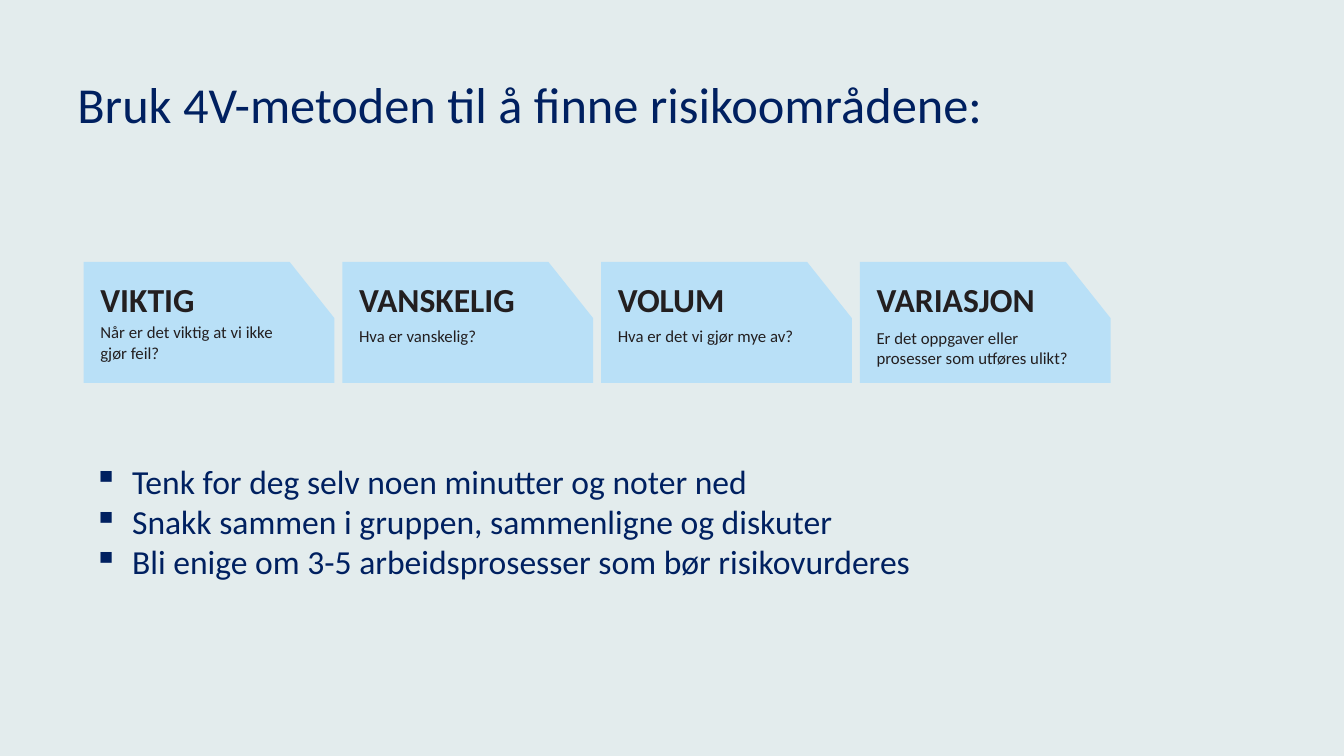
import dataclasses
import pptx
import pptx.dml.color
import pptx.enum.text
import pptx.oxml
import pptx.oxml.ns
import pptx.util

Cm = pptx.util.Cm
Anchor = pptx.enum.text.MSO_ANCHOR


@dataclasses.dataclass(frozen=True)
class Theme:
    font: str = "Calibri"
    back: str = "E3ECED"
    card: str = "B9E0F7"
    ink: str = "231F20"
    navy: str = "002060"
    title: int = 36
    head: int = 24
    note: int = 12


THEME = Theme()
TITLE = "Bruk 4V-metoden til å finne risikoområdene:"
CARDS = [
    ("VIKTIG", "Når er det viktig at vi ikke gjør feil?", 7.92),
    ("VANSKELIG", "Hva er vanskelig?", 8),
    ("VOLUM", "Hva er det vi gjør mye av?", 8),
    ("VARIASJON", "Er det oppgaver eller prosesser som utføres ulikt?", 8.05),
]
TASKS = [
    "Tenk for deg selv noen minutter og noter ned",
    "Snakk sammen i gruppen, sammenligne og diskuter",
    "Bli enige om 3-5 arbeidsprosesser som bør risikovurderes",
]


def paint(fill, color):
    fill.solid()
    fill.fore_color.rgb = pptx.dml.color.RGBColor.from_string(color)


def place(shape, left, top, width, height):
    shape.left, shape.top = Cm(left), Cm(top)
    shape.width, shape.height = Cm(width), Cm(height)


def add_mark(para, indent):
    props = para._p.get_or_add_pPr()
    props.set("marL", str(Cm(indent)))
    props.set("indent", str(-Cm(indent)))
    mark = pptx.oxml.parse_xml(f'<a:buChar {pptx.oxml.ns.nsdecls("a")} char="▪"/>')
    props.append(mark)


def write(frame, lines, size, color, bold=False, anchor=Anchor.TOP,
          inset=(0.25, 0.13, 0.25, 0.13), bullet=False):
    frame.word_wrap = True
    frame.auto_size = pptx.enum.text.MSO_AUTO_SIZE.NONE
    frame.vertical_anchor = anchor
    (frame.margin_left, frame.margin_top,
     frame.margin_right, frame.margin_bottom) = map(Cm, inset)
    for index, line in enumerate(lines):
        para = frame.add_paragraph() if index else frame.paragraphs[0]
        para.alignment = pptx.enum.text.PP_ALIGN.LEFT
        if bullet:
            add_mark(para, 0.97)
        run = para.add_run()
        run.text = line
        run.font.name = THEME.font
        run.font.size = pptx.util.Pt(size)
        run.font.bold = bold
        paint(run.font.fill, color)


def add_text(slide, box, lines, **style):
    shape = slide.shapes.add_textbox(*map(Cm, box))
    write(shape.text_frame, lines, **style)


def add_card(slide, left, label, note, drop):
    top, width, height = 6.6, 6.32, 3.05
    right, base = left + width, top + height
    path = slide.shapes.build_freeform(Cm(right - 1.13), Cm(top))
    points = [(left, top), (left, base), (right, base), (right, top + 1.42)]
    path.add_line_segments([(Cm(x), Cm(y)) for x, y in points], close=True)
    card = path.convert_to_shape()
    card.shadow.inherit = False
    paint(card.fill, THEME.card)
    card.line.fill.background()
    add_text(slide, (left, 7, 4.88, 1.08), [label], size=THEME.head,
             color=THEME.ink, bold=True, inset=(0.42, 0.03, 0, 0))
    add_text(slide, (left, drop, 5.4, 1.32), [note], size=THEME.note,
             color=THEME.ink, inset=(0.42, 0.2, 0, 0.1))


def main():
    deck = pptx.Presentation()
    deck.slide_width, deck.slide_height = Cm(33.87), Cm(19.05)
    slide = deck.slides.add_slide(deck.slide_layouts[5])
    paint(slide.background.fill, THEME.back)
    title = slide.shapes.title
    place(title, 1.7, 1.02, 30.48, 3.15)
    write(title.text_frame, [TITLE], size=THEME.title, color=THEME.navy,
          anchor=Anchor.MIDDLE)
    for index, (label, note, drop) in enumerate(CARDS):
        add_card(slide, 2.11 + 6.52 * index, label, note, drop)
    add_text(slide, (2.11, 11.48, 26.47, 4.11), TASKS, size=THEME.head,
             color=THEME.navy, bullet=True)
    deck.save("out.pptx")


if __name__ == "__main__":
    main()
